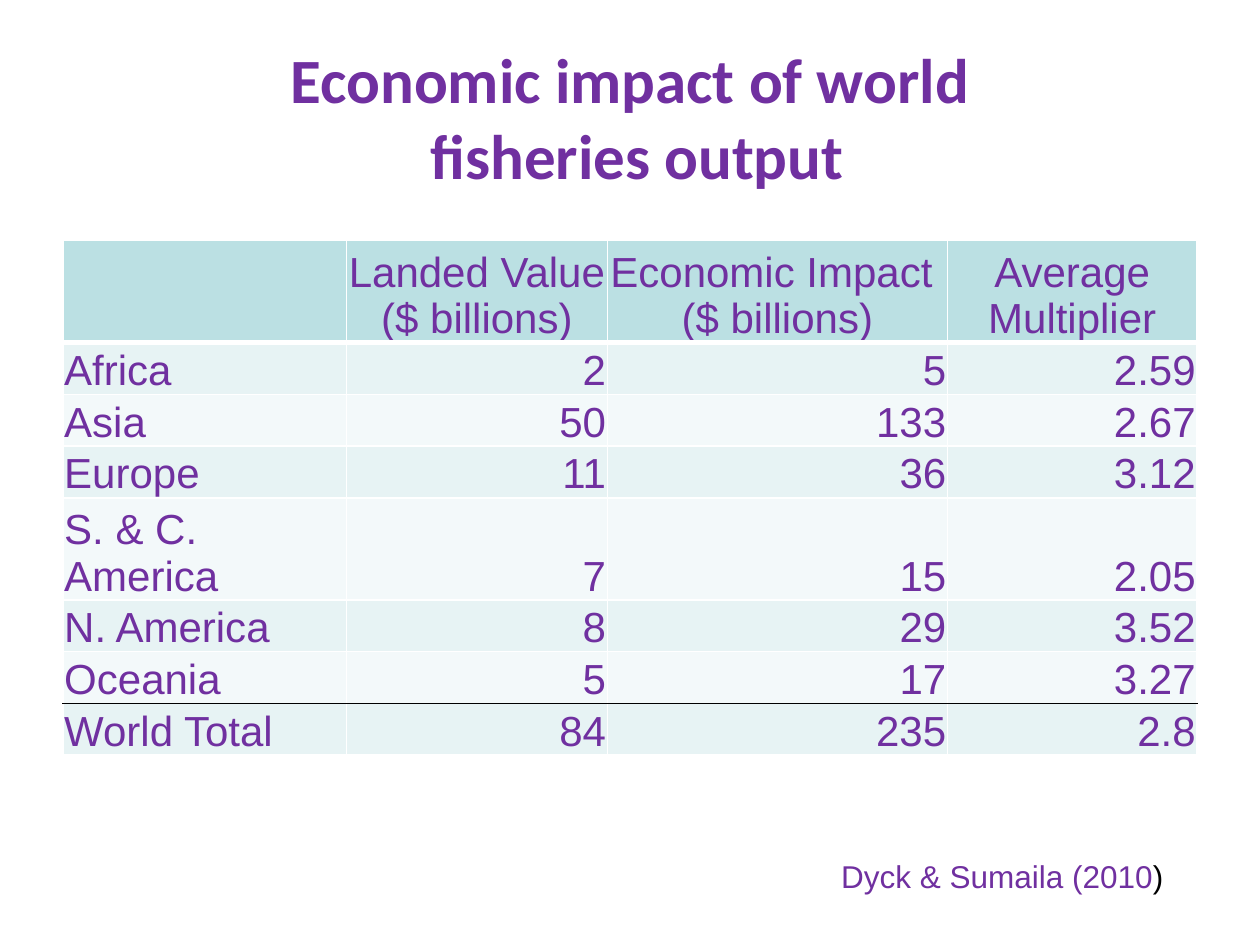
from lxml import etree
from pptx import Presentation, util as u
from pptx.dml.color import RGBColor
from pptx.enum import text as t
from pptx.oxml import ns

# Content
TITLE = "Economic impact of world\v fisheries output"
HEADER = ["", "Landed Value ($ billions)", "Economic Impact \n($ billions)", "Average Multiplier"]
REGIONS = [
    ("Africa", "2", "5", "2.59"),
    ("Asia", "50", "133", "2.67"),
    ("Europe", "11", "36", "3.12"),
    ("S. & C. America", "7", "15", "2.05"),
    ("N. America", "8", "29", "3.52"),
    ("Oceania", "5", "17", "3.27"),
    ("World Total", "84", "235", "2.8"),
]
SOURCE, SOURCE_END = "Dyck & Sumaila (2010", ") "

COLORS = {"text": "7030A0", "header": "BBE0E3", "odd": "E7F3F4", "even": "F3F9FA",
          "grid": "FFFFFF", "rule": "000000"}
WIDTH, HEIGHT = 10, 7.5
MARGIN = WIDTH * 0.05
COLUMN_SHARES = [0.25, 0.23, 0.3, 0.22]
ROW_HEIGHT = 0.41
LEFT, CENTER, RIGHT = t.PP_ALIGN.LEFT, t.PP_ALIGN.CENTER, t.PP_ALIGN.RIGHT


def write(frame, text, size=24, font="Arial", color="text", bold=False, align=LEFT):
    """Fill a text frame; newlines start paragraphs, vertical tabs break lines."""
    for index, line in enumerate(text.split("\n")):
        paragraph = frame.add_paragraph() if index else frame.paragraphs[0]
        paragraph.alignment = align
        old_runs = len(paragraph.runs)
        if old_runs:
            paragraph.add_run().text = line
        else:
            paragraph.text = line
        for run in paragraph.runs[old_runs:]:
            run.font.size, run.font.name, run.font.bold = u.Pt(size), font, bold
            run.font.color.rgb = RGBColor.from_string(COLORS[color])


def add_text_box(slide, left, top, width, height, wrap=True):
    frame = slide.shapes.add_textbox(*map(u.Inches, (left, top, width, height))).text_frame
    frame.word_wrap = wrap
    return frame


def set_borders(cell, top, bottom):
    """Draw all four borders; top and bottom are (color, points)."""
    properties = cell._tc.get_or_add_tcPr()
    sides = {"lnL": ("grid", 1), "lnR": ("grid", 1), "lnT": top, "lnB": bottom}
    for index, (tag, (color, points)) in enumerate(sides.items()):
        line = etree.Element(ns.qn(f"a:{tag}"), w=str(u.Pt(points)))
        fill = etree.SubElement(line, ns.qn("a:solidFill"))
        etree.SubElement(fill, ns.qn("a:srgbClr"), val=COLORS[color])
        properties.insert(index, line)


def add_impact_table(slide):
    rows = [HEADER, *REGIONS]
    width = WIDTH - 2 * MARGIN
    table = slide.shapes.add_table(
        len(rows), len(HEADER), u.Inches(MARGIN), u.Inches(1.91),
        u.Inches(width), u.Inches(ROW_HEIGHT * len(rows))).table
    for column, share in zip(table.columns, COLUMN_SHARES):
        column.width = u.Inches(width * share)

    # Rule between each pair of rows: thick under the header, black above the total
    rules = [("grid", 1)] * (len(rows) + 1)
    rules[1] = ("grid", 3)
    rules[-2] = ("rule", 1)

    for r, values in enumerate(rows):
        table.rows[r].height = u.Inches(ROW_HEIGHT)
        shade = "header" if r == 0 else "odd" if r % 2 else "even"
        for c, value in enumerate(values):
            cell = table.cell(r, c)
            cell.margin_left = cell.margin_right = cell.margin_top = u.Inches(0.01)
            cell.margin_bottom = 0
            cell.vertical_anchor = t.MSO_ANCHOR.BOTTOM
            cell.fill.solid()
            cell.fill.fore_color.rgb = RGBColor.from_string(COLORS[shade])
            set_borders(cell, rules[r], rules[r + 1])
            if value:
                write(cell.text_frame, value, align=CENTER if r == 0 else RIGHT if c else LEFT)


def main():
    presentation = Presentation()
    presentation.slide_width, presentation.slide_height = u.Inches(WIDTH), u.Inches(HEIGHT)
    slide = presentation.slides.add_slide(presentation.slide_layouts[6])

    # Title
    title = add_text_box(slide, MARGIN, HEIGHT * 0.04, WIDTH - 2 * MARGIN, 1.25)
    title.vertical_anchor = t.MSO_ANCHOR.MIDDLE
    write(title, TITLE, size=36, font="Calibri", bold=True, align=CENTER)

    add_impact_table(slide)

    # Source, with a black closing bracket
    source = add_text_box(slide, 6.55, HEIGHT * 0.9, 2.85, 0.4, wrap=False)
    source.auto_size = t.MSO_AUTO_SIZE.SHAPE_TO_FIT_TEXT
    write(source, SOURCE, size=18, align=RIGHT)
    write(source, SOURCE_END, size=18, color="rule", align=RIGHT)

    presentation.save("out.pptx")


if __name__ == "__main__":
    main()
